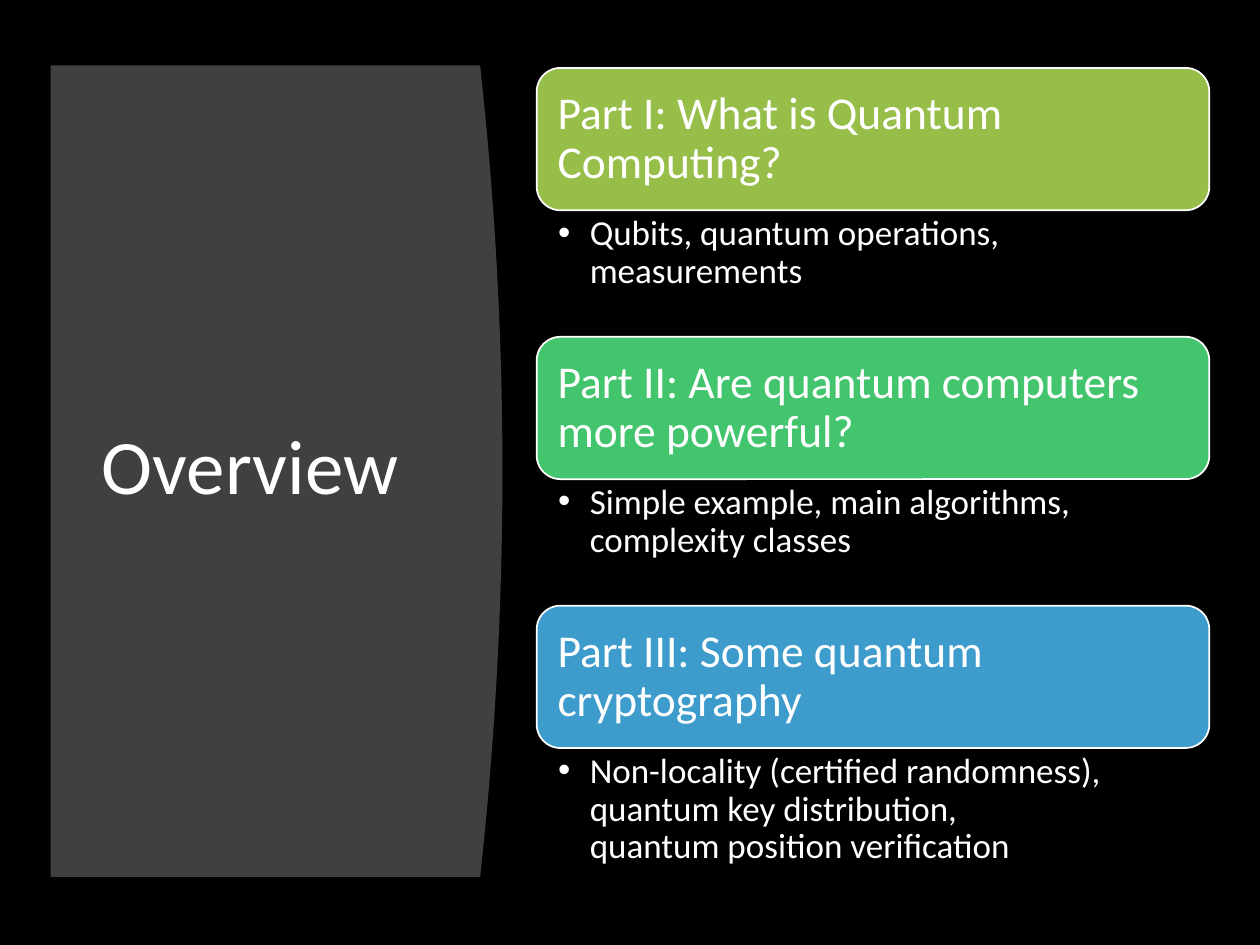
import pptx
import pptx.util
import pptx.dml.color
import pptx.enum.shapes
import pptx.enum.text
import pptx.oxml
import pptx.oxml.ns

Cm, Pt = pptx.util.Cm, pptx.util.Pt
ANCHOR = pptx.enum.text.MSO_ANCHOR
LEFT = pptx.enum.text.PP_ALIGN.LEFT


def paint(fmt, color):
    """Give a fill or font a solid colour from a hex string."""
    if hasattr(fmt, "solid"):
        fmt.solid()
    target = fmt.fore_color if hasattr(fmt, "fore_color") else fmt.color
    target.rgb = pptx.dml.color.RGBColor.from_string(color)


def write(tf, lines, size, anchor, insets=None):
    """Write one left-aligned white paragraph, with a break between lines."""
    tf.word_wrap = True
    tf.auto_size = pptx.enum.text.MSO_AUTO_SIZE.NONE
    tf.vertical_anchor = anchor
    if insets:
        tf.margin_left, tf.margin_top, tf.margin_right, tf.margin_bottom = map(Cm, insets)
    p = tf.paragraphs[0]
    p.alignment = LEFT
    p.line_spacing = 0.9
    for i, line in enumerate(lines):
        if i:
            p.add_line_break()
        r = p.add_run()
        r.text = line
        r.font.size = Pt(size)
        r.font.name = "Calibri"
        paint(r.font, "FFFFFF")
    return p


prs = pptx.Presentation()
prs.slide_width, prs.slide_height = Cm(25.4), Cm(19.05)
s = prs.slides.add_slide(prs.slide_layouts[5])
paint(s.background.fill, "000000")

# Grey panel whose right side bulges along a parabola
left, corner, bulge = 1.02, 9.68, 0.45
top, bottom = 1.32, 17.68
steps = 40
points = []
for i in range(steps + 1):
    t = 2 * i / steps - 1
    y = top + (bottom - top) * i / steps
    points.append((Cm(corner + bulge * (1 - t * t)), Cm(y)))
points.append((Cm(left), Cm(bottom)))
fb = s.shapes.build_freeform(Cm(left), Cm(top))
fb.add_line_segments(points, close=True)
panel = fb.convert_to_shape()
panel.shadow.inherit = False
paint(panel.fill, "404040")
panel.line.fill.background()

# Title, placed in front of the panel
title = s.shapes.title
title.left, title.top, title.width, title.height = Cm(1.8), Cm(2.82), Cm(7.11), Cm(13.31)
write(title.text_frame, ["Overview"], 44, ANCHOR.MIDDLE)
panel._element.addnext(title._element)

# Parts: a coloured heading with a bullet below it
parts = [
    ("97BE49", "Part I: What is Quantum Computing?",
     ["Qubits, quantum operations, measurements"]),
    ("43C56E", "Part II: Are quantum computers more powerful?",
     ["Simple example, main algorithms, complexity classes"]),
    ("3D9CCC", "Part III: Some quantum cryptography",
     ["Non-locality (certified randomness), quantum key distribution, ",
      "quantum position verification"]),
]
x, y0, w, head_h, body_h = 10.82, 1.37, 13.56, 2.87, 2.55
for i, (color, heading, details) in enumerate(parts):
    y = y0 + i * (head_h + body_h)
    sp = s.shapes.add_shape(pptx.enum.shapes.MSO_SHAPE.ROUNDED_RECTANGLE,
                            Cm(x), Cm(y), Cm(w), Cm(head_h))
    sp.shadow.inherit = False
    paint(sp.fill, color)
    paint(sp.line.fill, "FFFFFF")
    sp.line.width = Pt(1)
    write(sp.text_frame, [heading], 26, ANCHOR.MIDDLE, (0.28, 0.28, 0.28, 0.28))

    tb = s.shapes.add_textbox(Cm(x), Cm(y + head_h), Cm(w), Cm(body_h))
    p = write(tb.text_frame, details, 20, ANCHOR.TOP, (0.43, 0.1, 0.5, 0.1))
    pPr = p._p.get_or_add_pPr()
    pPr.set("marL", str(Cm(0.64)))
    pPr.set("indent", str(-Cm(0.64)))
    for tag, key, value in (("buFont", "typeface", "Arial"), ("buChar", "char", "•")):
        bullet = pptx.oxml.parse_xml(f'<a:{tag} {pptx.oxml.ns.nsdecls("a")} {key}="{value}"/>')
        pPr.append(bullet)

prs.save("out.pptx")
